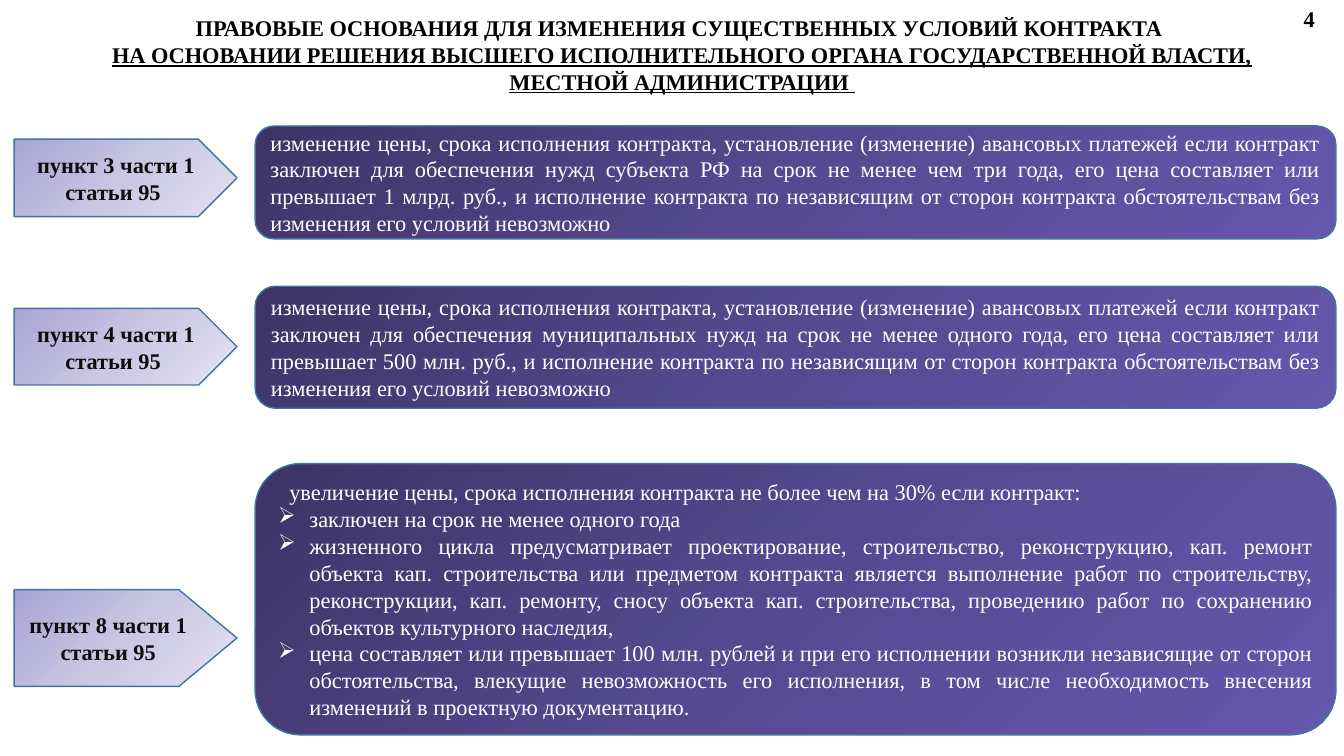
from copy import deepcopy

from pptx import Presentation
from pptx import util as u
from pptx.dml.color import RGBColor
from pptx.enum import shapes, text
from pptx.oxml import parse_xml
from pptx.oxml.ns import nsdecls, qn

CENTER, JUSTIFY = text.PP_ALIGN.CENTER, text.PP_ALIGN.JUSTIFY
PLATE, ROUNDED = shapes.MSO_SHAPE.PENTAGON, shapes.MSO_SHAPE.ROUNDED_RECTANGLE
LABEL_LEFT, LABEL_WIDTH = 14, 221
PANEL_LEFT, PANEL_WIDTH = 253, 1072


def px(n):
    """Length in EMU, at 100 px to the inch."""
    return u.Emu(n * 9144)


def rgb(value):
    return RGBColor.from_string(value)


class Deck:
    FONT, SIZE = "Times New Roman", 16
    DARK = ("3C3466", "554A91", "6557AD")
    LIGHT = ("A9A3D4", "CAC7E3", "E5E3F1")
    OUTLINE = "43739E"

    def __init__(self, width, height):
        self.prs = Presentation()
        self.prs.slide_width, self.prs.slide_height = px(width), px(height)
        self.slide = self.prs.slides.add_slide(self.prs.slide_layouts[5])

    def fill_text(self, tf, lines, color, align=None, bold=False):
        tf.word_wrap = True
        for i, line in enumerate(lines):
            p = tf.paragraphs[0] if i == 0 else tf.add_paragraph()
            p.text, p.alignment = line, align
            p.font.name, p.font.size = self.FONT, u.Pt(self.SIZE)
            p.font.bold, p.font.color.rgb = bold, rgb(color)

    def title(self, box, lines):
        sp = self.slide.shapes.title
        sp.left, sp.top, sp.width, sp.height = map(px, box)
        tf = sp.text_frame
        tf.auto_size = text.MSO_AUTO_SIZE.NONE
        tf.vertical_anchor = text.MSO_ANCHOR.MIDDLE
        self.fill_text(tf, lines, "000000", CENTER, bold=True)
        for p in tf.paragraphs[1:]:
            p.font.underline = True

    def number(self, box, value):
        sp = self.slide.shapes.add_textbox(*map(px, box))
        self.fill_text(sp.text_frame, [value], "000000", bold=True)

    def gradient_shape(self, kind, box, colors):
        sp = self.slide.shapes.add_shape(kind, *map(px, box))
        sp.shadow.inherit = False
        sp.line.color.rgb, sp.line.width = rgb(self.OUTLINE), u.Pt(1)
        sp.fill.gradient()
        sp.fill.gradient_angle = 315
        stops = sp._element.spPr.find(".//" + qn("a:gsLst"))
        stops.insert(1, deepcopy(stops[0]))
        for stop, position, color in zip(sp.fill.gradient_stops, (0, 0.5, 1), colors):
            stop.position, stop.color.rgb = position, rgb(color)
        sp.text_frame.vertical_anchor = text.MSO_ANCHOR.MIDDLE
        return sp

    def label(self, top, height, lines, point=0.5):
        box = (LABEL_LEFT, top, LABEL_WIDTH, height)
        sp = self.gradient_shape(PLATE, box, self.LIGHT)
        sp.adjustments[0] = point
        self.fill_text(sp.text_frame, lines, "0D0D0D", CENTER, bold=True)

    def panel(self, top, height, intro, items=()):
        box = (PANEL_LEFT, top, PANEL_WIDTH, height)
        sp = self.gradient_shape(ROUNDED, box, self.DARK)
        self.fill_text(sp.text_frame, [intro, *items], "FFFFFF", JUSTIFY)
        if items:
            first, *rest = sp.text_frame.paragraphs
            self.indent(first, 11)
            for p in rest:
                self.indent(p, 31, "➢")

    def indent(self, p, left, bullet=None):
        pPr = p._p.get_or_add_pPr()
        pPr.set("marL", str(px(left)))
        if bullet:
            pPr.set("indent", str(-px(left)))
            char = parse_xml(f'<a:buChar {nsdecls("a")} char="{bullet}"/>')
            pPr.find(qn("a:defRPr")).addprevious(char)


def term_change(purpose, term, price):
    """Wording shared by points 3 and 4."""
    return (
        "изменение цены, срока исполнения контракта, установление (изменение) авансовых "
        f"платежей если контракт заключен для обеспечения {purpose} на срок не менее {term}, "
        f"его цена составляет или превышает {price} руб., и исполнение контракта по независящим "
        "от сторон контракта обстоятельствам без изменения его условий невозможно"
    )


def main():
    deck = Deck(1333, 750)
    deck.title((58, 3, 1237, 102), [
        "ПРАВОВЫЕ ОСНОВАНИЯ ДЛЯ ИЗМЕНЕНИЯ СУЩЕСТВЕННЫХ УСЛОВИЙ КОНТРАКТА ",
        "НА ОСНОВАНИИ РЕШЕНИЯ ВЫСШЕГО ИСПОЛНИТЕЛЬНОГО ОРГАНА ГОСУДАРСТВЕННОЙ ВЛАСТИ, "
        "МЕСТНОЙ АДМИНИСТРАЦИИ ",
    ])

    deck.panel(125, 112, term_change("нужд субъекта РФ", "чем три года", "1 млрд."))
    deck.label(138, 77, ["пункт 3 части 1 статьи 95 "])

    deck.panel(284, 121, term_change("муниципальных нужд", "одного года", "500 млн."))
    deck.label(306, 76, ["пункт 4 части 1 статьи 95 "])

    deck.panel(
        460, 269,
        "увеличение цены, срока исполнения контракта не более чем на 30% если контракт:",
        [
            "заключен на срок не менее одного года ",
            "жизненного цикла предусматривает проектирование, строительство, реконструкцию, "
            "кап. ремонт объекта кап. строительства или предметом контракта является выполнение "
            "работ по строительству, реконструкции, кап. ремонту, сносу объекта кап. "
            "строительства, проведению работ по сохранению объектов культурного наследия, ",
            "цена составляет или превышает 100 млн. рублей и при его исполнении возникли "
            "независящие от сторон обстоятельства, влекущие невозможность его исполнения, в том "
            "числе необходимость внесения изменений в проектную документацию. ",
        ],
    )
    deck.label(585, 96, ["пункт 8 части 1 ", "статьи 95 "], point=0.6)

    deck.number((1283, 0, 41, 37), "4")
    deck.prs.save("out.pptx")


if __name__ == "__main__":
    main()
